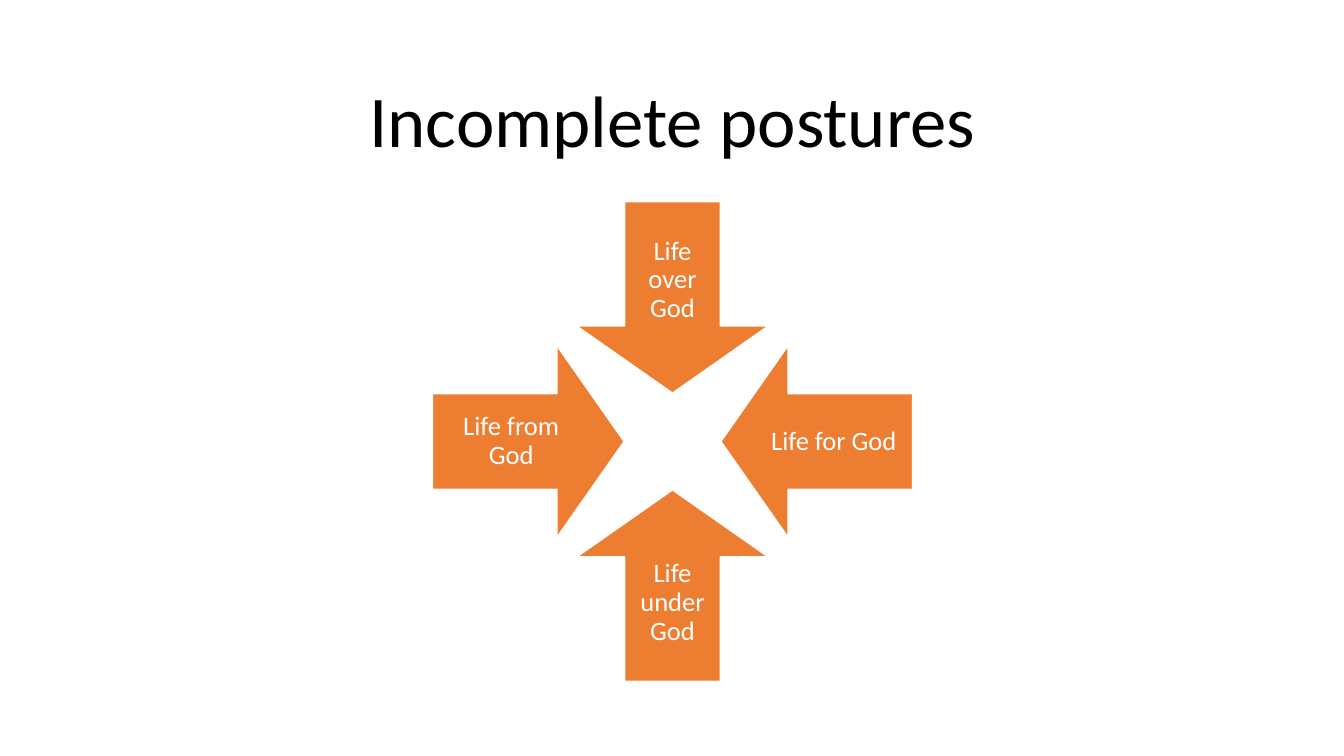
from pptx import Presentation
from pptx.dml.color import RGBColor
from pptx.enum.shapes import MSO_SHAPE
from pptx.enum.text import MSO_ANCHOR, PP_ALIGN
from pptx.util import Inches, Pt

ORANGE = RGBColor(0xED, 0x7D, 0x31)
WHITE = RGBColor(0xFF, 0xFF, 0xFF)
BLACK = RGBColor(0x00, 0x00, 0x00)

CENTER_X, CENTER_Y = 6.67, 4.38
ARROW_SIZE, ARROW_REACH = 1.9, 1.43
LABEL_LENGTH, LABEL_BREADTH, LABEL_REACH = 1.57, 0.95, 1.6

POSTURES = [
    ("Life over God", 0, -1, 0),
    ("Life for God", 1, 0, 90),
    ("Life under God", 0, 1, 180),
    ("Life from God", -1, 0, 270),
]


class PostureSlide:
    """Holds the slide and its style, and draws the title, arrows and labels."""

    font = "Calibri"

    def __init__(self, deck):
        self.slide = deck.slides.add_slide(deck.slide_layouts[5])
        self.diagram = self.slide.shapes.add_group_shape().shapes

    def set_text(self, frame, text, size, color):
        frame.text = text
        frame.word_wrap = True
        frame.vertical_anchor = MSO_ANCHOR.MIDDLE
        paragraph = frame.paragraphs[0]
        paragraph.alignment = PP_ALIGN.CENTER
        paragraph.line_spacing = 0.9
        font = paragraph.runs[0].font
        font.name, font.size, font.color.rgb = self.font, Pt(size), color

    def title(self, text):
        heading = self.slide.shapes.title
        heading.left, heading.top = Inches(0.92), Inches(0.61)
        heading.width, heading.height = Inches(11.5), Inches(1.24)
        self.set_text(heading.text_frame, text, 52, BLACK)

    def arrow(self, x, y, rotation):
        arrow = self.diagram.add_shape(
            MSO_SHAPE.DOWN_ARROW,
            Inches(x - ARROW_SIZE / 2), Inches(y - ARROW_SIZE / 2),
            Inches(ARROW_SIZE), Inches(ARROW_SIZE))
        arrow.rotation = rotation
        arrow.adjustments[0], arrow.adjustments[1] = 0.5, 0.35
        arrow.shadow.inherit = False
        arrow.fill.solid()
        arrow.fill.fore_color.rgb = ORANGE
        arrow.line.color.rgb = WHITE
        arrow.line.width = Pt(1)

    def label(self, text, x, y, width, height):
        label = self.diagram.add_textbox(
            Inches(x - width / 2), Inches(y - height / 2),
            Inches(width), Inches(height))
        frame = label.text_frame
        frame.margin_left = frame.margin_right = Inches(0.15)
        frame.margin_top = frame.margin_bottom = Inches(0.15)
        self.set_text(frame, text, 19, WHITE)


def main():
    deck = Presentation()
    deck.slide_width, deck.slide_height = Inches(13.33), Inches(7.5)
    page = PostureSlide(deck)
    page.title("Incomplete postures")
    for text, dx, dy, rotation in POSTURES:
        page.arrow(CENTER_X + dx * ARROW_REACH, CENTER_Y + dy * ARROW_REACH, rotation)
        width, height = (LABEL_LENGTH, LABEL_BREADTH) if dx else (LABEL_BREADTH, LABEL_LENGTH)
        page.label(text, CENTER_X + dx * LABEL_REACH, CENTER_Y + dy * LABEL_REACH, width, height)
    deck.save("out.pptx")


if __name__ == "__main__":
    main()
